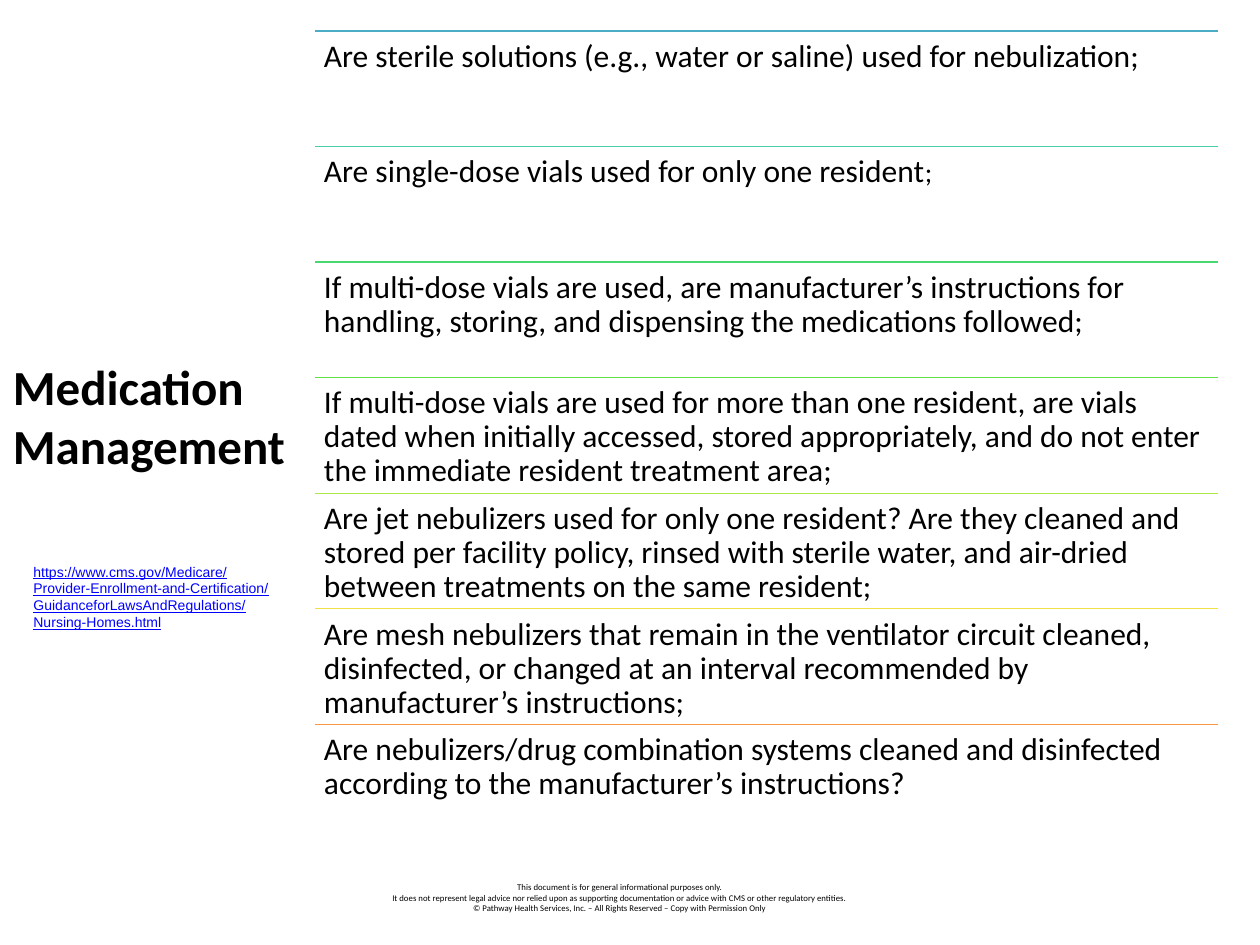
from lxml.etree import SubElement as Sub
from pptx import Presentation
from pptx.dml.color import RGBColor as RGB
from pptx.enum.shapes import MSO_CONNECTOR as Conn
from pptx.enum.text import MSO_ANCHOR as Anchor, PP_ALIGN as Align
from pptx.oxml.ns import qn
from pptx.util import Emu, Pt

# Content
TITLE = "Medication Management"
LINK = ("https://www.cms.gov/Medicare/Provider-Enrollment-and-Certification/"
        "GuidanceforLawsAndRegulations/Nursing-Homes.html")
NOTICE = [
    "This document is for general informational purposes only.",
    "It does not represent legal advice nor relied upon as supporting "
    "documentation or advice with CMS or other regulatory entities.",
    "© Pathway Health Services, Inc. – All Rights Reserved – Copy with Permission Only",
]
# Each row: rule colour, then runs of (text, size)
ROWS = [
    ("teal", [("Are sterile solutions (e.g., water or saline) used for nebulization;", 18)]),
    ("mint", [("Are single-dose vials used for only one resident", 18), (";", 16)]),
    ("green", [("If multi-dose vials are used, are manufacturer’s instructions for "
                "handling, storing, and dispensing the medications followed;", 18)]),
    ("grass", [("If multi-dose vials are used for more than one resident, are vials "
                "dated when initially accessed, stored appropriately, and do not enter "
                "the immediate resident treatment area;", 18)]),
    ("lime", [("Are jet nebulizers used for only one resident? Are they cleaned and "
               "stored per facility policy, rinsed with sterile water, and air-dried "
               "between treatments on the same resident;", 18)]),
    ("yellow", [("Are mesh nebulizers that remain in the ventilator circuit cleaned, "
                 "disinfected, or changed at an interval recommended by "
                 "manufacturer’s instructions;", 18)]),
    ("orange", [("Are nebulizers/drug combination systems cleaned and disinfected "
                 "according to the manufacturer’s instructions?", 18)]),
]
HEX = {"black": "000000", "blue": "0000FF", "teal": "4BACC6", "mint": "49CFAE",
       "green": "47D872", "grass": "60E146", "lime": "ACE946",
       "yellow": "F0E146", "orange": "F79646"}

# Layout in px
WIDE, HIGH = 1260, 945
LEFT, TOP, SPAN, DEPTH = 315, 31, 903, 809
STEP = DEPTH / len(ROWS)


def px(n):
    return Emu(round(n * 914400 / 126))


def write(slide, box, paras, pad=None, anchor=Anchor.TOP, para=None,
          color="black", **font):
    """Add a text box; paras is a list of lists of (text, size)."""
    frame = slide.shapes.add_textbox(*map(px, box)).text_frame
    frame.word_wrap = True
    frame.vertical_anchor = anchor
    if pad:
        for side, gap in zip(("left", "top", "right", "bottom"), pad):
            setattr(frame, "margin_" + side, px(gap))
    for i, runs in enumerate(paras):
        p = frame.paragraphs[0] if i == 0 else frame.add_paragraph()
        for key, val in (para or {}).items():
            setattr(p, key, val)
        for text, size in runs:
            run = p.add_run()
            run.text = text
            look = {"name": "Calibri", "size": Pt(size), **font}
            for key, val in look.items():
                setattr(run.font, key, val)
            run.font.color.rgb = RGB.from_string(HEX[color])


def rule(slide, y, color):
    """Add a thin line with a soft shadow below it."""
    line = slide.shapes.add_connector(
        Conn.STRAIGHT, px(LEFT), px(y), px(LEFT + SPAN), px(y))
    line.line.width = Pt(0.75)
    line.line.color.rgb = RGB.from_string(HEX[color])
    fx = Sub(line._element.spPr, qn("a:effectLst"))
    shade = Sub(fx, qn("a:outerShdw"), blurRad=str(Pt(3.1)), dist=str(Pt(1.8)),
                dir="5400000", rotWithShape="0")
    tone = Sub(shade, qn("a:srgbClr"), val=HEX["black"])
    Sub(tone, qn("a:alpha"), val="35000")


def main():
    deck = Presentation()
    deck.slide_width, deck.slide_height = px(WIDE), px(HIGH)
    slide = deck.slides.add_slide(deck.slide_layouts[6])

    # Footer notice and title
    write(slide, (347, 876, 546, 44), [[(t, 5)] for t in NOTICE],
          para={"alignment": Align.CENTER})
    write(slide, (4, 168, 353, 495), [[(TITLE, 28)]], pad=(9, 5, 9, 5),
          anchor=Anchor.MIDDLE, bold=True)

    # Ruled list of questions
    for i, (color, runs) in enumerate(ROWS):
        y = TOP + i * STEP
        rule(slide, y, color)
        write(slide, (LEFT, y, SPAN, STEP), [runs], pad=(9, 9, 9, 9),
              para={"line_spacing": 0.9})

    # Source address
    write(slide, (21, 557, 273, 81), [[(LINK, 8)]], color="blue",
          name="Arial", underline=True)
    deck.save("out.pptx")


if __name__ == "__main__":
    main()
